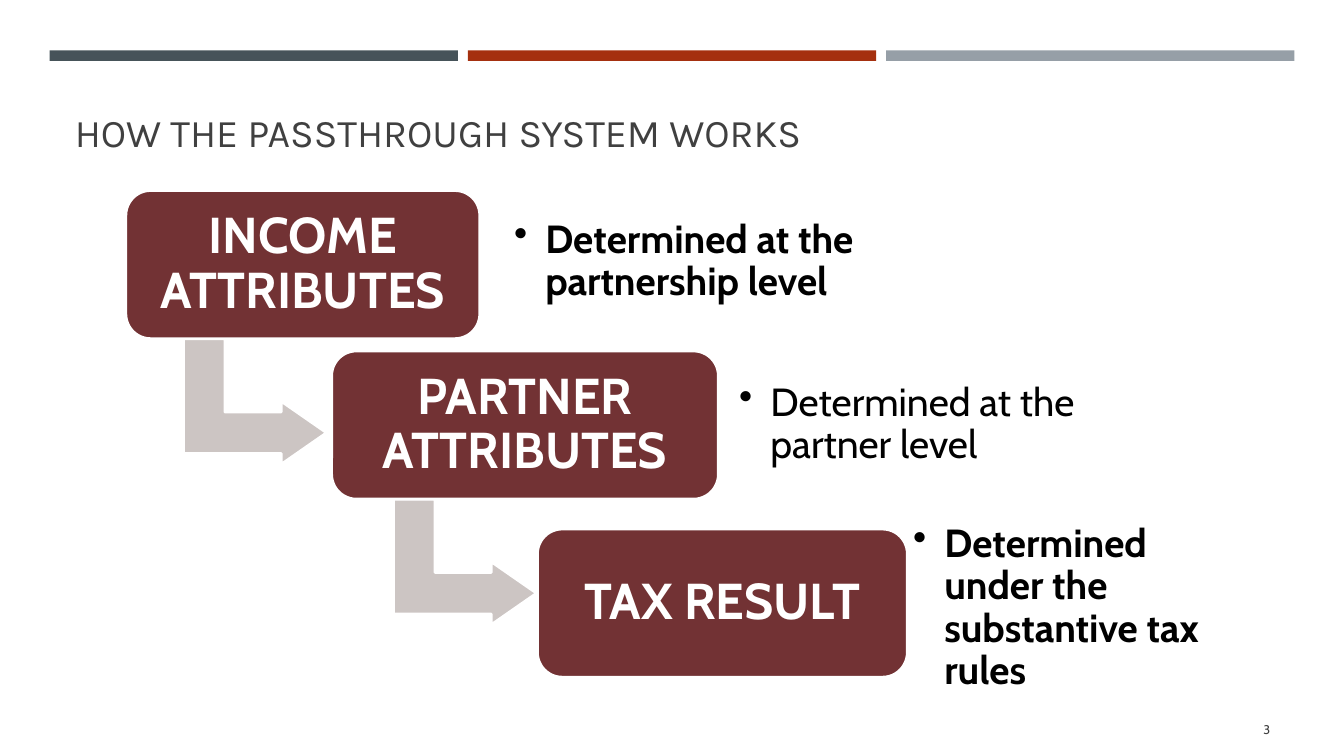
from dataclasses import dataclass

import pptx
import pptx.dml.color
import pptx.enum.shapes
import pptx.enum.text
import pptx.oxml
import pptx.oxml.ns
import pptx.util

SHAPE = pptx.enum.shapes.MSO_SHAPE
ALIGN = pptx.enum.text.PP_ALIGN
ANCHOR = pptx.enum.text.MSO_ANCHOR

# The slide is a grid of 160 columns by 90 rows of square cells
COLUMNS, ROWS = 160, 90
CELL = pptx.util.Inches(1) // 12

COLORS = {
    "slate": "465359", "rust": "A5300F", "gray": "969FA7",
    "maroon": "723234", "arrow": "CCC5C3",
    "white": "FFFFFF", "black": "000000", "dark": "404040",
}
BOX_ROWS = 17.6
ARROW_DROP = 16.6  # rows from the top of a box to its arrow
INSET = 0.15
HANGING = 0.31


@dataclass
class Area:
    column: float
    row: float
    columns: float
    rows: float

    def lengths(self) -> list[int]:
        return [round(cells * CELL)
                for cells in (self.column, self.row, self.columns, self.rows)]


@dataclass
class Step:
    label: str
    box: Area
    detail: str
    detail_area: Area
    bold_detail: bool = True
    arrow_column: float | None = None


STEPS = [
    Step("INCOME ATTRIBUTES", Area(15, 22.7, 42.1, BOX_ROWS),
         "Determined at the partnership level", Area(59.4, 24, 58.6, 14.3),
         arrow_column=22.9),
    Step("PARTNER ATTRIBUTES", Area(39.5, 41.8, 46, BOX_ROWS),
         "Determined at the partner level", Area(86.2, 43.4, 44.8, 14.3),
         bold_detail=False, arrow_column=47.9),
    Step("TAX RESULT", Area(64, 63, 44, BOX_ROWS),
         "Determined under the substantive tax rules",
         Area(106.9, 62.5, 44, 19.8)),
]


def rgb(color: str) -> pptx.dml.color.RGBColor:
    return pptx.dml.color.RGBColor.from_string(COLORS[color])


def write(box, text: str, *, size: float, color: str, font: str = "Cabin",
          bold: bool = False, align=ALIGN.LEFT, anchor=ANCHOR.MIDDLE,
          inset: float | None = None, spacing: float = 1.0,
          bullet: bool = False) -> None:
    frame = box.text_frame
    frame.word_wrap = True
    frame.auto_size = pptx.enum.text.MSO_AUTO_SIZE.NONE
    frame.vertical_anchor = anchor
    if inset is not None:
        frame.margin_left = frame.margin_right = pptx.util.Inches(inset)
        frame.margin_top = frame.margin_bottom = pptx.util.Inches(inset)
    para = frame.paragraphs[0]
    para.alignment = align
    para.line_spacing = spacing
    if bullet:
        properties = para._p.get_or_add_pPr()
        indent = pptx.util.Inches(HANGING)
        properties.set("marL", str(indent))
        properties.set("indent", str(-indent))
        mark = pptx.oxml.parse_xml(
            f'<a:buChar {pptx.oxml.ns.nsdecls("a")} char="•"/>')
        properties.append(mark)
    span = para.add_run()
    span.text = text
    span.font.name = font
    span.font.size = pptx.util.Pt(size)
    span.font.bold = bold
    span.font.color.rgb = rgb(color)


def add_block(page, kind, area: Area, fill: str, outlined: bool = True):
    block = page.shapes.add_shape(kind, *area.lengths())
    block.shadow.inherit = False
    block.fill.solid()
    block.fill.fore_color.rgb = rgb(fill)
    if outlined:
        block.line.color.rgb = rgb("white")
        block.line.width = pptx.util.Pt(1.75)
    else:
        block.line.fill.background()
    return block


def add_step(page, step: Step) -> None:
    # Arrow to the next box
    if step.arrow_column is not None:
        area = Area(step.arrow_column, step.box.row + ARROW_DROP, 14.9, 17)
        arrow = add_block(page, SHAPE.BENT_UP_ARROW, area, "arrow")
        arrow.rotation = 90
        for index, share in enumerate((0.33, 0.25, 0.36)):
            arrow.adjustments[index] = share
    # Labelled box
    box = add_block(page, SHAPE.ROUNDED_RECTANGLE, step.box, "maroon")
    write(box, step.label, size=36, color="white", bold=True,
          align=ALIGN.CENTER, inset=INSET, spacing=0.9)
    # Bulleted detail
    detail = page.shapes.add_textbox(*step.detail_area.lengths())
    write(detail, step.detail, size=28, color="black", bold=step.bold_detail,
          inset=INSET, spacing=0.9, bullet=True)


def main() -> None:
    deck = pptx.Presentation()
    deck.slide_width, deck.slide_height = COLUMNS * CELL, ROWS * CELL
    page = deck.slides.add_slide(deck.slide_layouts.get_by_name("Title Only"))

    # Colour bars along the top
    for index, color in enumerate(("slate", "rust", "gray")):
        bar = Area(5.9 + 49.8 * index, 6, 48.6, 1.25)
        add_block(page, SHAPE.RECTANGLE, bar, color, outlined=False)

    # Title
    title = page.shapes.title
    title.left, title.top, title.width, title.height = Area(
        7.7, 9.25, 144.7, 9.85).lengths()
    write(title, "HOW THE PASSTHROUGH SYSTEM WORKS", size=28, color="dark",
          font="Karla", anchor=ANCHOR.BOTTOM)

    # Staircase of steps
    for step in STEPS:
        add_step(page, step)

    # Page number
    number = page.shapes.add_textbox(*Area(138.6, 84.4, 13.8, 4.8).lengths())
    write(number, "3", size=9, color="dark", align=ALIGN.RIGHT)

    deck.save("out.pptx")


if __name__ == "__main__":
    main()
